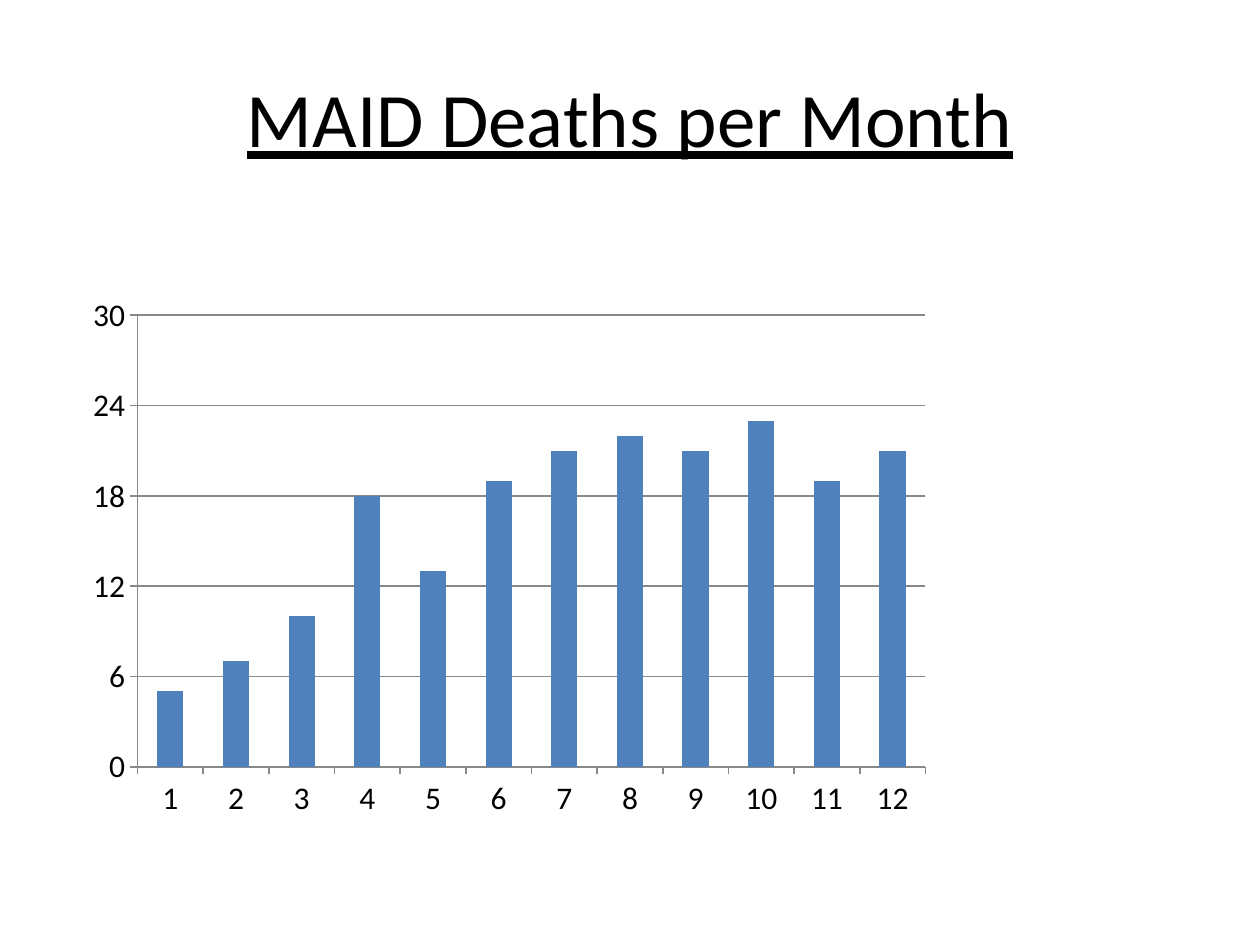
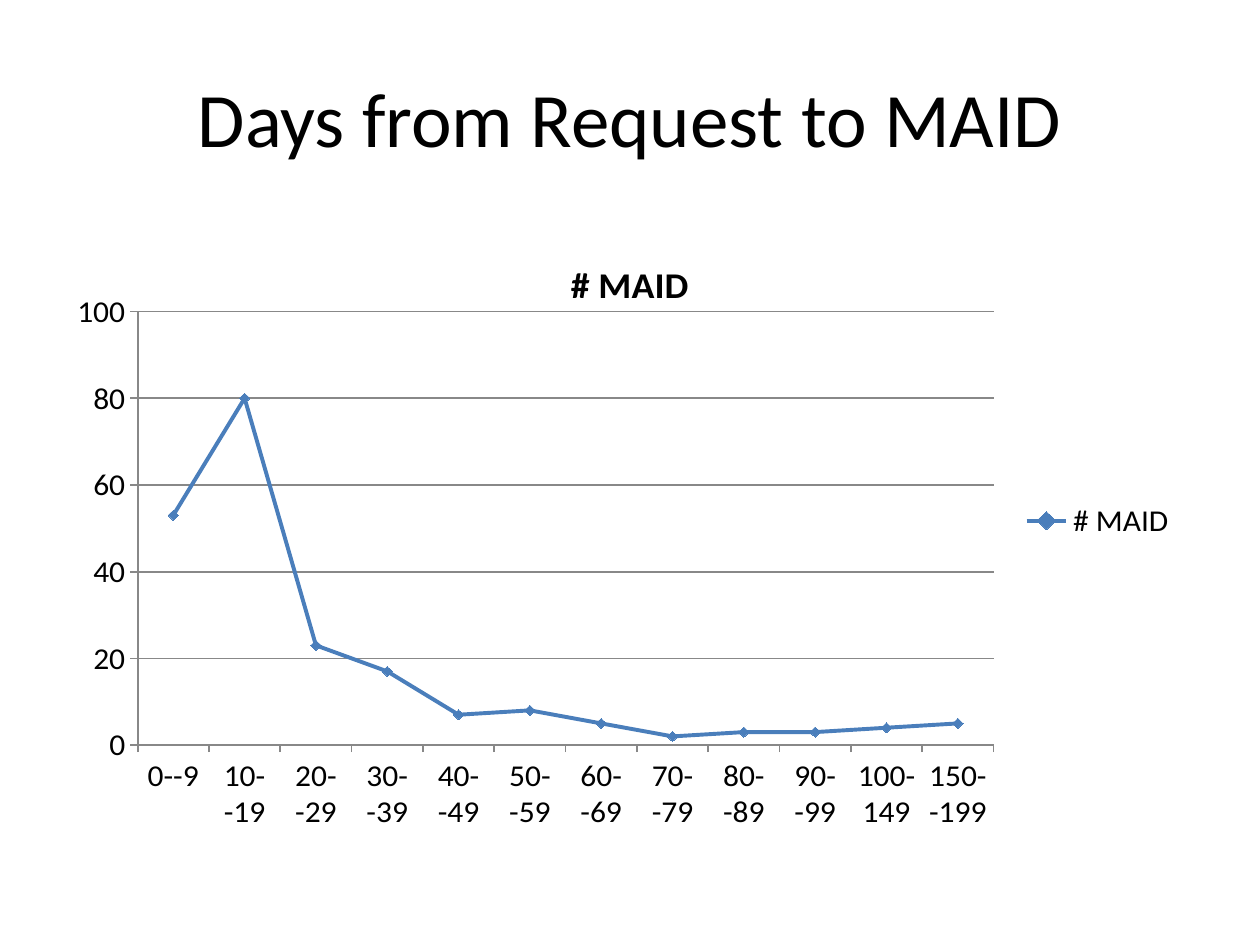
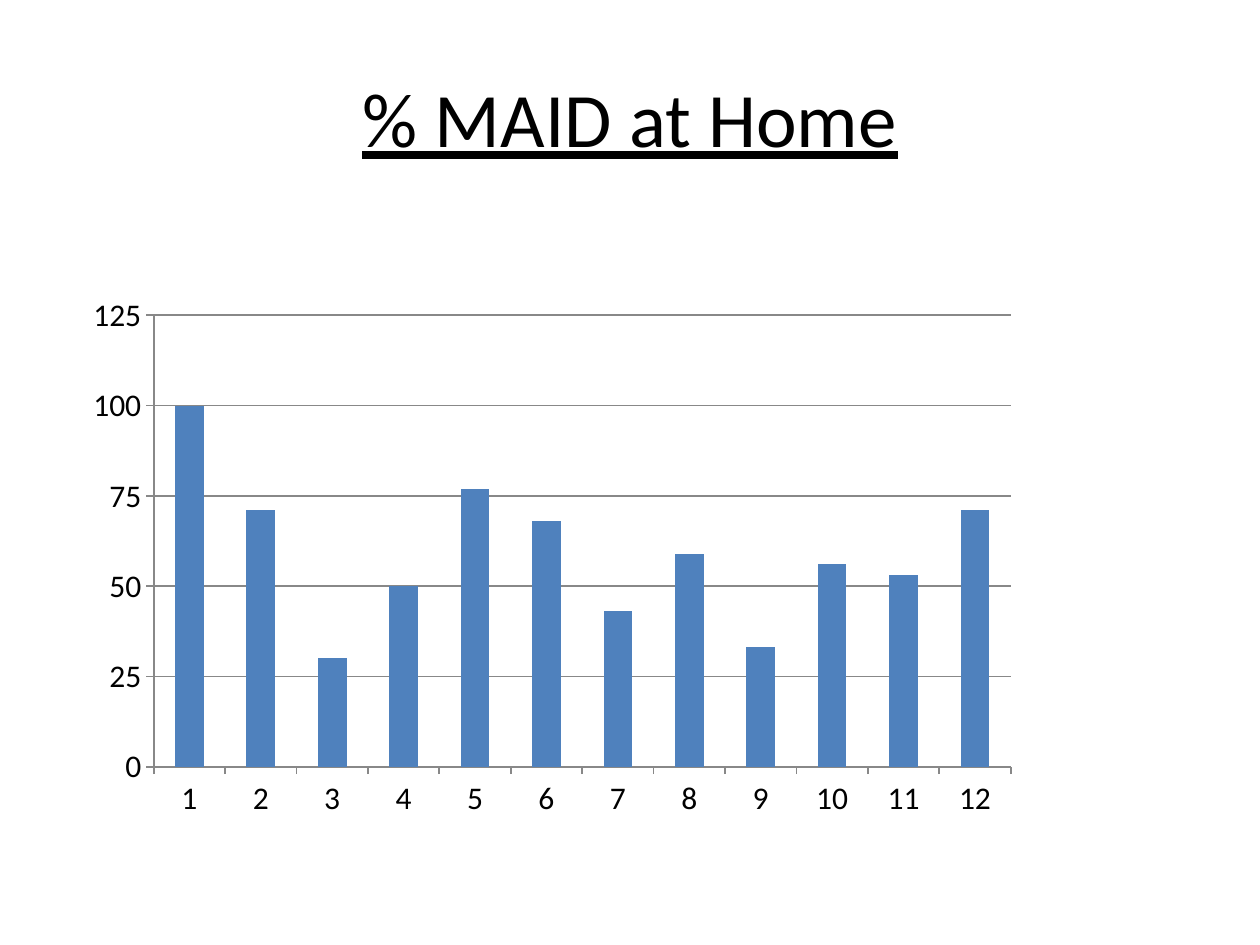
"""Build three slides that chart MAID deaths, waiting days and home share."""
from dataclasses import dataclass

from lxml.etree import SubElement
from pptx import Presentation
from pptx.chart.data import CategoryChartData
from pptx.dml.color import RGBColor
from pptx.enum.chart import (XL_CHART_TYPE, XL_LEGEND_POSITION, XL_MARKER_STYLE,
                             XL_TICK_LABEL_POSITION, XL_TICK_MARK)
from pptx.enum.text import MSO_ANCHOR, PP_ALIGN
from pptx.oxml.ns import qn
from pptx.util import Inches, Pt


@dataclass(frozen=True)
class Theme:
    face: str = "Calibri"
    ink: str = "000000"
    grid: str = "888888"
    bar: str = "4F81BD"
    line: str = "4A7EBB"
    head: float = 44
    name: float = 21.6
    label: float = 18
    base: float = 10


class Deck:
    def __init__(self, theme):
        self.theme = theme
        self.show = Presentation()
        self.show.slide_width = Inches(10)
        self.show.slide_height = Inches(7.5)
        self.slide = None

    def style(self, font, size, bold=False):
        font.name = self.theme.face
        font.size = Pt(size)
        font.bold = bold
        font.color.rgb = RGBColor.from_string(self.theme.ink)

    def stroke(self, line, color, width):
        line.color.rgb = RGBColor.from_string(color)
        line.width = Pt(width)

    def paint(self, fill, color):
        fill.solid()
        fill.fore_color.rgb = RGBColor.from_string(color)

    def page(self, text, under=False):
        self.slide = self.show.slides.add_slide(self.show.slide_layouts[5])
        title = self.slide.shapes.title
        title.left, title.top = Inches(0.5), Inches(0.3)
        title.width, title.height = Inches(9), Inches(1.25)
        frame = title.text_frame
        frame.text = text
        frame.vertical_anchor = MSO_ANCHOR.MIDDLE
        frame.margin_left = frame.margin_right = Inches(0.05)
        frame.margin_top = frame.margin_bottom = Inches(0.05)
        frame.paragraphs[0].alignment = PP_ALIGN.CENTER
        font = frame.paragraphs[0].runs[0].font
        self.style(font, self.theme.head)
        font.underline = under

    def axis(self, axis):
        axis.major_tick_mark = XL_TICK_MARK.OUTSIDE
        axis.minor_tick_mark = XL_TICK_MARK.NONE
        self.style(axis.tick_labels.font, self.theme.label)
        self.stroke(axis.format.line, self.theme.grid, 1)

    def place(self, chart, plot):
        area = chart.element.chart.plotArea
        for old in area.findall(qn("c:layout")):
            area.remove(old)
        layout = SubElement(area, qn("c:layout"))
        area.insert(0, layout)
        manual = SubElement(layout, qn("c:manualLayout"))
        parts = [("layoutTarget", "inner"), ("xMode", "edge"), ("yMode", "edge")]
        for tag, value in parts + list(zip("xywh", plot)):
            SubElement(manual, qn(f"c:{tag}")).set("val", str(value))

    def chart(self, kind, box, plot, name, cats, values, step, top):
        data = CategoryChartData()
        data.categories = cats
        data.add_series(name, values)
        frame = self.slide.shapes.add_chart(kind, *map(Inches, box), data)
        chart = frame.chart
        self.style(chart.font, self.theme.base)
        chart.has_title = chart.has_legend = False
        self.place(chart, plot)
        cat, val = chart.category_axis, chart.value_axis
        self.axis(cat)
        self.axis(val)
        cat.tick_label_position = XL_TICK_LABEL_POSITION.LOW
        val.minimum_scale, val.maximum_scale, val.major_unit = 0, top, step
        val.tick_labels.number_format = "0"
        val.tick_labels.number_format_is_linked = False
        val.has_major_gridlines = True
        self.stroke(val.major_gridlines.format.line, self.theme.grid, 1)
        chart.plots[0].vary_by_categories = False
        return chart

    def bars(self, box, plot, values, step, top):
        cats = [str(month) for month in range(1, 13)]
        chart = self.chart(XL_CHART_TYPE.COLUMN_CLUSTERED, box, plot,
                           "Series 1", cats, values, step, top)
        chart.plots[0].gap_width = 150
        self.paint(chart.series[0].format.fill, self.theme.bar)

    def curve(self, box, plot, name, cats, values, step, top):
        chart = self.chart(XL_CHART_TYPE.LINE_MARKERS, box, plot,
                           name, cats, values, step, top)
        series = chart.series[0]
        series.smooth = False
        self.stroke(series.format.line, self.theme.line, 2.25)
        marker = series.marker
        marker.style, marker.size = XL_MARKER_STYLE.DIAMOND, 6
        self.paint(marker.format.fill, self.theme.bar)
        self.stroke(marker.format.line, self.theme.line, 0.75)
        chart.has_title = True
        text = chart.chart_title.text_frame
        text.text = name
        self.style(text.paragraphs[0].runs[0].font, self.theme.name, True)
        chart.has_legend = True
        chart.legend.position = XL_LEGEND_POSITION.RIGHT
        chart.legend.include_in_layout = True
        self.style(chart.legend.font, self.theme.label)


def main():
    deck = Deck(Theme())

    deck.page("MAID Deaths per Month", under=True)
    deaths = [5, 7, 10, 18, 13, 19, 21, 22, 21, 23, 19, 21]
    deck.bars((0.56, 2.21, 6.82, 4.38), (0.078, 0.067, 0.917, 0.818), deaths, 6, 30)

    deck.page("Days from Request to MAID")
    spans = ["0--9"] + [f"{low}--{low + 9}" for low in range(10, 100, 10)]
    spans += ["100-149", "150--199"]
    counts = [53, 80, 23, 17, 7, 8, 5, 2, 3, 3, 4, 5]
    deck.curve((0.56, 1.86, 8.88, 4.73), (0.06, 0.135, 0.765, 0.757),
               "# MAID", spans, counts, 20, 100)

    deck.page("% MAID at Home", under=True)
    shares = [100, 71, 30, 50, 77, 68, 43, 59, 33, 56, 53, 71]
    deck.bars((0.56, 2.21, 7.5, 4.38), (0.088, 0.067, 0.907, 0.818), shares, 25, 125)

    deck.show.save("out.pptx")


if __name__ == "__main__":
    main()
